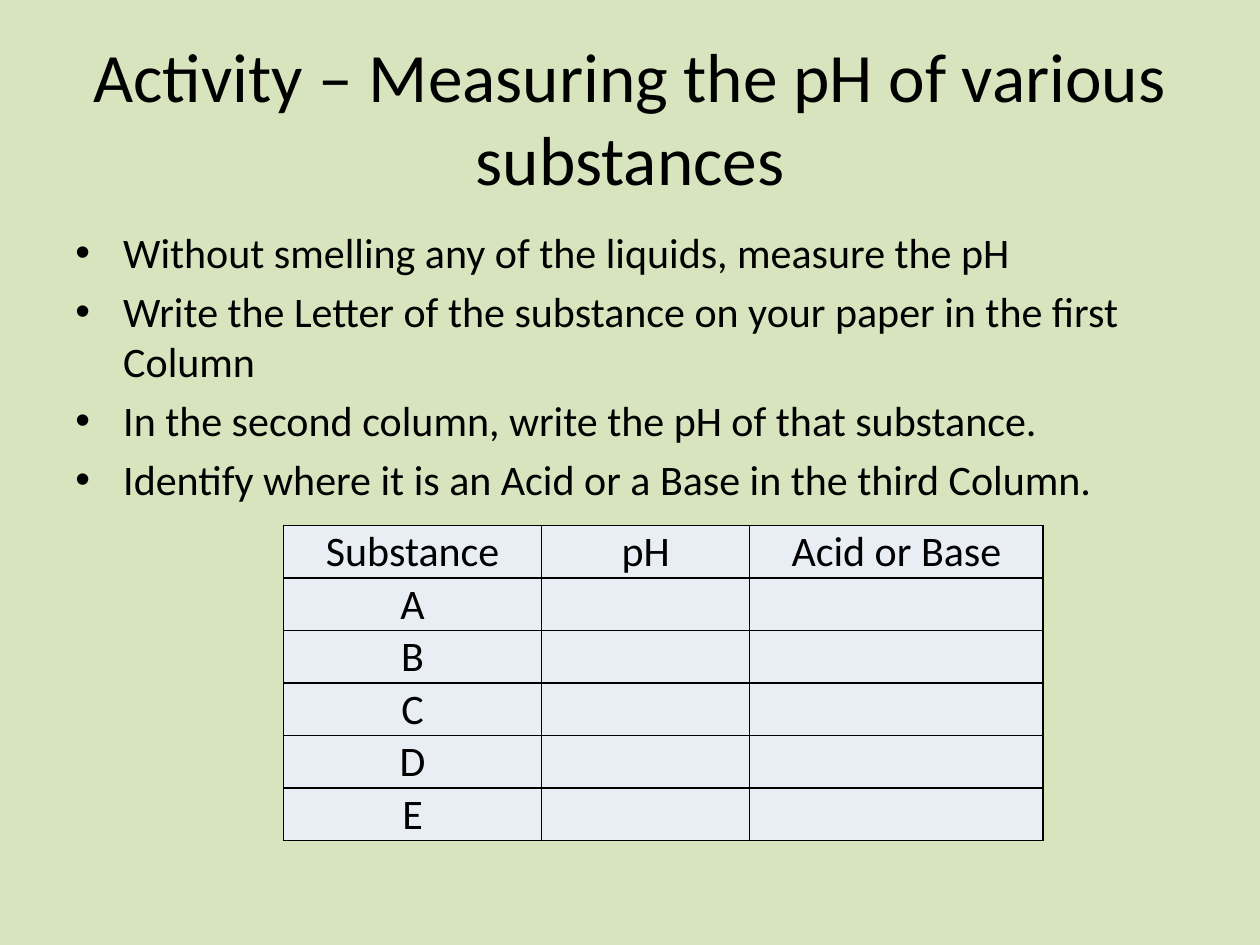
from dataclasses import dataclass

from lxml import etree
from pptx import Presentation
from pptx.dml.color import RGBColor
from pptx.enum.text import MSO_ANCHOR, MSO_AUTO_SIZE, PP_ALIGN
from pptx.oxml.ns import qn
from pptx.util import Inches, Pt

CENTER = PP_ALIGN.CENTER
MIDDLE, BOTTOM = MSO_ANCHOR.MIDDLE, MSO_ANCHOR.BOTTOM
NO_FIT = MSO_AUTO_SIZE.NONE
TITLE_ONLY = 5


@dataclass(frozen=True)
class Theme:
    font: str = "Calibri"
    ink: str = "000000"
    back: str = "D7E4BD"
    cell: str = "E9EDF4"
    title: float = 39.6
    body: float = 24
    rule: float = 1


THEME = Theme()
WIDE, HIGH = 10, 7.5
EDGE = WIDE / 20
SPAN = WIDE - 2 * EDGE
INDENT = 0.38

STEPS = (
    "Without smelling any of the liquids, measure the pH",
    "Write the Letter of the substance on your paper in the first Column",
    "In the second column, write the pH of that substance.",
    "Identify where it is an Acid or a Base in the third Column.",
)
HEADS = ("Substance", "pH", "Acid or Base")
LETTERS = "ABCDE"
COLS = (2.05, 1.65, 2.33)
ROW = 0.417


def rgb(code):
    return RGBColor.from_string(code)


def box(left, top, width, height):
    return [Inches(n) for n in (left, top, width, height)]


def style(font, size):
    font.name = THEME.font
    font.size = Pt(size)
    font.color.rgb = rgb(THEME.ink)


def write(para, text, size):
    run = para.add_run()
    run.text = text
    style(run.font, size)


def add_title(slide, text):
    title = slide.shapes.title
    title.left, title.top, title.width, title.height = box(
        EDGE, HIGH * 0.04, SPAN, HIGH / 6)
    frame = title.text_frame
    frame.word_wrap = True
    frame.auto_size = NO_FIT
    frame.vertical_anchor = MIDDLE
    para = frame.paragraphs[0]
    para.alignment = CENTER
    write(para, text, THEME.title)


def add_bullet(para):
    props = para._p.get_or_add_pPr()
    props.set("marL", str(Inches(INDENT)))
    props.set("indent", str(-Inches(INDENT)))
    etree.SubElement(props, qn("a:buFont")).set("typeface", "Arial")
    etree.SubElement(props, qn("a:buChar")).set("char", "•")


def add_steps(slide, steps):
    place = box(EDGE, 1.75, SPAN, HIGH * 0.66)
    frame = slide.shapes.add_textbox(*place).text_frame
    frame.word_wrap = True
    for i, step in enumerate(steps):
        para = frame.add_paragraph() if i else frame.paragraphs[0]
        para.space_before = Pt(THEME.body * 0.2)
        add_bullet(para)
        write(para, step, THEME.body)


def add_border(cell):
    """Rule all four sides; lines must come before the fill in the XML."""
    props = cell._tc.get_or_add_tcPr()
    for i, side in enumerate(("lnL", "lnR", "lnT", "lnB")):
        line = etree.Element(qn(f"a:{side}"), w=str(Pt(THEME.rule)))
        fill = etree.SubElement(line, qn("a:solidFill"))
        etree.SubElement(fill, qn("a:srgbClr")).set("val", THEME.ink)
        props.insert(i, line)


def fill_cell(cell, text):
    cell.fill.solid()
    cell.fill.fore_color.rgb = rgb(THEME.cell)
    cell.margin_left = cell.margin_right = cell.margin_top = Inches(0.01)
    cell.margin_bottom = 0
    cell.vertical_anchor = BOTTOM
    para = cell.text_frame.paragraphs[0]
    para.alignment = CENTER
    if text:
        write(para, text, THEME.body)
    add_border(cell)


def add_grid(slide, rows):
    place = box(2.25, 4.17, sum(COLS), ROW * len(rows))
    table = slide.shapes.add_table(len(rows), len(COLS), *place).table
    table.horz_banding = False
    for col, width in zip(table.columns, COLS):
        col.width = Inches(width)
    for r, texts in enumerate(rows):
        table.rows[r].height = Inches(ROW)
        for c, text in enumerate(texts):
            fill_cell(table.cell(r, c), text)


def main():
    deck = Presentation()
    deck.slide_width, deck.slide_height = Inches(WIDE), Inches(HIGH)
    slide = deck.slides.add_slide(deck.slide_layouts[TITLE_ONLY])
    slide.background.fill.solid()
    slide.background.fill.fore_color.rgb = rgb(THEME.back)
    add_title(slide, "Activity – Measuring the pH of various substances")
    add_steps(slide, STEPS)
    add_grid(slide, [HEADS] + [(letter, "", "") for letter in LETTERS])
    deck.save("out.pptx")


if __name__ == "__main__":
    main()
